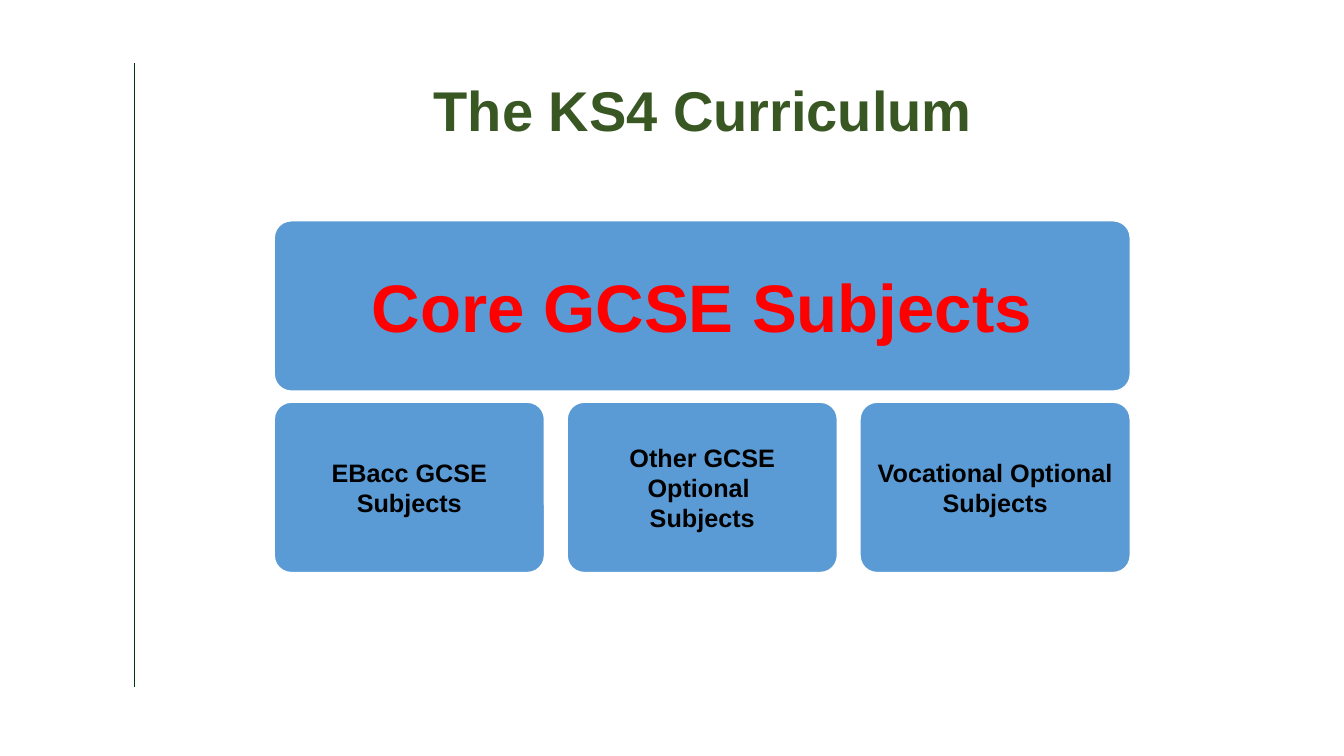
from dataclasses import dataclass

from lxml import etree
from pptx import Presentation
from pptx.dml.color import RGBColor
from pptx.enum.shapes import MSO_CONNECTOR, MSO_SHAPE
from pptx.enum.text import MSO_ANCHOR, MSO_AUTO_SIZE, PP_ALIGN
from pptx.oxml.ns import qn
from pptx.slide import Slide
from pptx.text.text import TextFrame
from pptx.util import Inches, Pt

ROUNDED = MSO_SHAPE.ROUNDED_RECTANGLE
STRAIGHT = MSO_CONNECTOR.STRAIGHT
MIDDLE = MSO_ANCHOR.MIDDLE
CENTER = PP_ALIGN.CENTER
NO_FIT = MSO_AUTO_SIZE.NONE
TITLE_ONLY_LAYOUT = 5


@dataclass(frozen=True)
class Theme:
    font: str = "Arial"
    rule: RGBColor = RGBColor(0x00, 0x39, 0x07)
    title: RGBColor = RGBColor(0x38, 0x57, 0x23)
    box_fill: RGBColor = RGBColor(0x5B, 0x9B, 0xD5)
    box_line: RGBColor = RGBColor(0xFF, 0xFF, 0xFF)
    core: RGBColor = RGBColor(0xFF, 0x00, 0x00)
    option: RGBColor = RGBColor(0x00, 0x00, 0x00)
    title_size: int = 40
    core_size: int = 48
    option_size: int = 18


@dataclass(frozen=True)
class SubjectBox:
    text: str
    left: float
    top: float
    width: float
    inset: float
    size: int
    color: RGBColor


THEME = Theme()

# Box grid, in inches
GRID_LEFT, GRID_WIDTH = 2.72, 8.49
CORE_TOP, OPTION_TOP = 2.19, 3.99
BOX_HEIGHT, OPTION_WIDTH = 1.69, 2.68
CORE_INSET, OPTION_INSET = 0.2, 0.07
OPTIONS = (
    "EBacc GCSE\nSubjects",
    "Other GCSE Optional \nSubjects",
    "Vocational Optional Subjects",
)
OPTION_STEP = (GRID_WIDTH - OPTION_WIDTH) / (len(OPTIONS) - 1)


def format_text(frame: TextFrame, size: int, color: RGBColor) -> None:
    frame.word_wrap = True
    frame.auto_size = NO_FIT
    frame.vertical_anchor = MIDDLE
    for para in frame.paragraphs:
        para.alignment = CENTER
        for span in para.runs:
            span.font.name = THEME.font
            span.font.size = Pt(size)
            span.font.bold = True
            span.font.color.rgb = color


def add_rule(page: Slide) -> None:
    rule = page.shapes.add_connector(
        STRAIGHT, Inches(1.33), Inches(0.63), Inches(1.33), Inches(6.82))
    rule.line.color.rgb = THEME.rule
    rule.line.width = Pt(0.5)
    properties = rule._element.find(qn("p:spPr"))
    etree.SubElement(properties, qn("a:effectLst"))


def add_title(page: Slide, text: str) -> None:
    title = page.shapes.title
    title.left, title.top = Inches(1.52), Inches(0.4)
    title.width, title.height = Inches(10.9), Inches(1.45)
    title.text_frame.text = text
    title.text_frame.paragraphs[0].line_spacing = 0.9
    format_text(title.text_frame, THEME.title_size, THEME.title)


def add_subject_box(page: Slide, box: SubjectBox) -> None:
    shape = page.shapes.add_shape(
        ROUNDED, Inches(box.left), Inches(box.top),
        Inches(box.width), Inches(BOX_HEIGHT))
    shape.adjustments[0] = 0.1
    shape.shadow.inherit = False
    shape.fill.solid()
    shape.fill.fore_color.rgb = THEME.box_fill
    shape.line.color.rgb = THEME.box_line
    shape.line.width = Pt(1)
    frame = shape.text_frame
    frame.margin_left = frame.margin_right = Inches(box.inset)
    frame.margin_top = frame.margin_bottom = Inches(box.inset)
    frame.text = box.text
    format_text(frame, box.size, box.color)


def main() -> None:
    deck = Presentation()
    deck.slide_width, deck.slide_height = Inches(13.33), Inches(7.5)
    page = deck.slides.add_slide(deck.slide_layouts[TITLE_ONLY_LAYOUT])

    # Side rule and heading
    add_rule(page)
    add_title(page, "The KS4 Curriculum")

    # Core subjects above a row of options
    core = SubjectBox("Core GCSE Subjects", GRID_LEFT, CORE_TOP, GRID_WIDTH,
                      CORE_INSET, THEME.core_size, THEME.core)
    options = [
        SubjectBox(text, GRID_LEFT + index * OPTION_STEP, OPTION_TOP,
                   OPTION_WIDTH, OPTION_INSET, THEME.option_size, THEME.option)
        for index, text in enumerate(OPTIONS)
    ]
    for box in [core, *options]:
        add_subject_box(page, box)

    deck.save("out.pptx")


if __name__ == "__main__":
    main()
